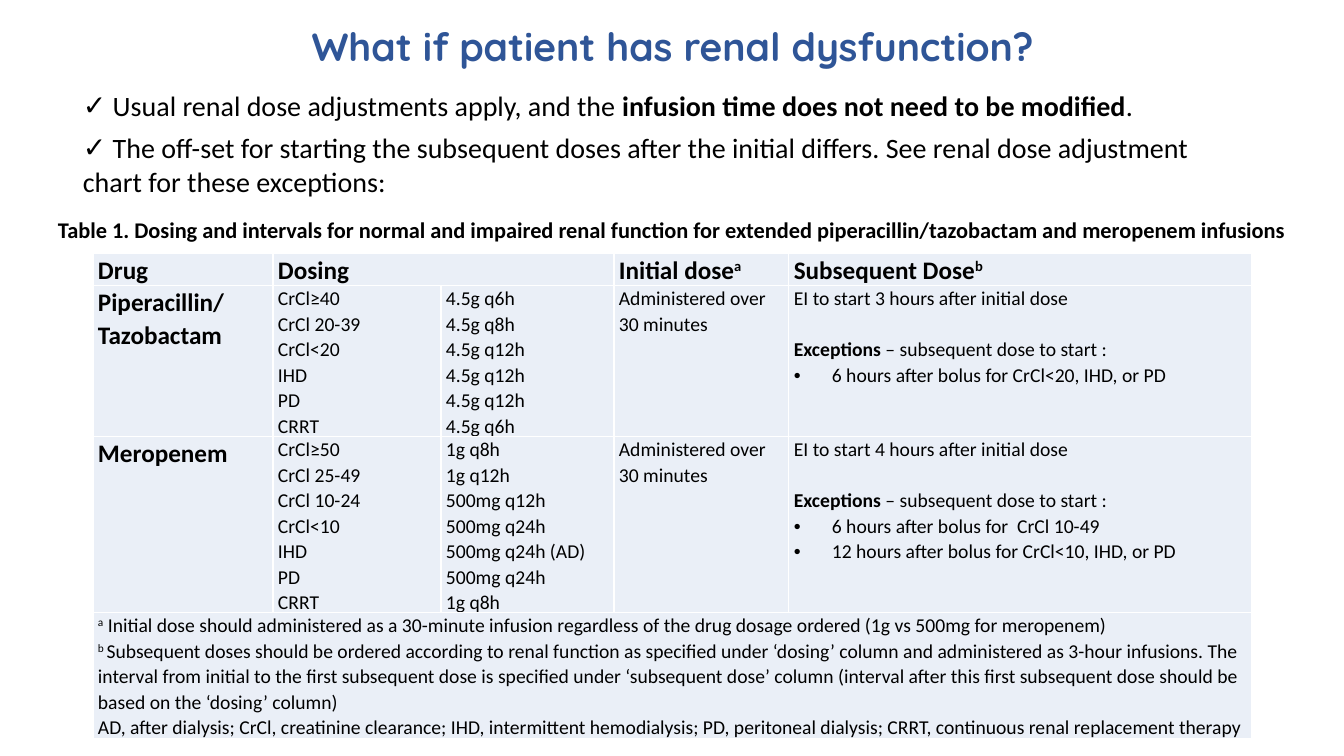
from lxml import etree
from pptx import Presentation
from pptx.dml.color import RGBColor
from pptx.enum.text import MSO_ANCHOR, PP_ALIGN
from pptx.oxml.ns import qn
from pptx.util import Emu, Pt

CENTER, BOTTOM = PP_ALIGN.CENTER, MSO_ANCHOR.BOTTOM
PX = 914400 / 100.8
HEX = {"title": "2F5597", "text": "000000", "cell": "EAEFF7", "rule": "FFFFFF"}

# In all text, *...* is bold and ^...^ is superscript.
TITLE = "*What if patient has renal dysfunction?*"
POINTS = [
    " Usual renal dose adjustments apply, and the *infusion time does not need to be modified*.",
    " The off-set for starting the subsequent doses after the initial differs. "
    "See renal dose adjustment chart for these exceptions:",
]
CAPTION = ("*Table 1. Dosing and intervals for normal and impaired renal function "
           "for extended piperacillin/tazobactam and meropenem infusions*")
HEAD = ["*Drug*", "*Dosing*", "", "*Initial dose^a^*", "*Subsequent Dose^b^*"]
FIRST = "Administered over 30 minutes"
DRUGS = [
    {"name": ["*Piperacillin/*", "*Tazobactam*"],
     "doses": [("CrCl≥40", "4.5g q6h"), ("CrCl 20-39", "4.5g q8h"),
               ("CrCl<20", "4.5g q12h"), ("IHD", "4.5g q12h"),
               ("PD", "4.5g q12h"), ("CRRT", "4.5g q6h")],
     "start": "EI to start 3 hours after initial dose",
     "except": ["6 hours after bolus for CrCl<20, IHD, or PD"]},
    {"name": ["*Meropenem*"],
     "doses": [("CrCl≥50", "1g q8h"), ("CrCl 25-49", "1g q12h"),
               ("CrCl 10-24", "500mg q12h"), ("CrCl<10", "500mg q24h"),
               ("IHD", "500mg q24h (AD)"), ("PD", "500mg q24h"),
               ("CRRT", "1g q8h")],
     "start": "EI to start 4 hours after initial dose",
     "except": ["6 hours after bolus for  CrCl 10-49",
                "12 hours after bolus for CrCl<10, IHD, or PD"]},
]
NOTES = [
    "^a^ Initial dose should administered as a 30-minute infusion regardless of "
    "the drug dosage ordered (1g vs 500mg for meropenem)",
    "^b ^Subsequent doses should be ordered according to renal function as specified under "
    "‘dosing’ column and administered as 3-hour infusions. The interval from initial to the "
    "first subsequent dose is specified under ‘subsequent dose’ column (interval after this "
    "first subsequent dose should be based on the ‘dosing’ column)",
    "AD, after dialysis; CrCl, creatinine clearance; IHD, intermittent hemodialysis; "
    "PD, peritoneal dialysis; CRRT, continuous renal replacement therapy",
]
COLS = [180, 168, 173, 175, 463]
ROWS = [17, 115, 143, 97]
GRID = (93, 253, sum(COLS), 485)


def px(n):
    return Emu(round(n * PX))


def rgb(name):
    return RGBColor.from_string(HEX[name])


def write(para, text, size, font="Calibri", color="text", **form):
    """Fill a paragraph with marked-up text and set its format values."""
    for key, value in form.items():
        setattr(para, key, value)
    bold = False
    for i, part in enumerate(text.split("*")):
        bold = i % 2 == 1
        for j, piece in enumerate(part.split("^")):
            if not piece:
                continue
            run = para.add_run()
            run.text = piece
            look = {"name": font, "size": Pt(size), "bold": bold}
            for key, value in look.items():
                setattr(run.font, key, value)
            run.font.color.rgb = rgb(color)
            if j % 2:
                run.font._element.set("baseline", "30000")


def bullet(para, char, indent=0):
    props = para._p.get_or_add_pPr()
    props.set("marL", str(px(indent)))
    props.set("indent", str(-px(indent)))
    etree.SubElement(props, qn("a:buFont")).set("typeface", "Arial")
    etree.SubElement(props, qn("a:buChar")).set("char", char)


def next_para(frame, i):
    return frame.add_paragraph() if i else frame.paragraphs[0]


def box(slide, *place):
    frame = slide.shapes.add_textbox(*map(px, place)).text_frame
    frame.word_wrap = True
    return frame


def style(cell):
    """Set the margins, fill and borders of a cell."""
    sides = {"margin_left": 5, "margin_right": 5, "margin_top": 0, "margin_bottom": 0}
    for key, value in sides.items():
        setattr(cell, key, px(value))
    cell.fill.solid()
    cell.fill.fore_color.rgb = rgb("cell")
    props = cell._tc.get_or_add_tcPr()
    for i, side in enumerate(("lnL", "lnR", "lnT", "lnB")):
        line = etree.Element(qn("a:" + side), w=str(Pt(1)))
        fill = etree.SubElement(line, qn("a:solidFill"))
        etree.SubElement(fill, qn("a:srgbClr")).set("val", HEX["rule"])
        props.insert(i, line)


def fill_cell(cell, lines, size=14):
    for i, text in enumerate(lines):
        write(next_para(cell.text_frame, i), text, size, line_spacing=1.07)


def fill_drug(cells, drug):
    kinds, doses = zip(*drug["doses"])
    fill_cell(cells[0], drug["name"], 18)
    fill_cell(cells[1], kinds)
    fill_cell(cells[2], doses)
    fill_cell(cells[3], [FIRST])
    fill_cell(cells[4], [drug["start"], "*Exceptions* – subsequent dose to start :",
                         *drug["except"]])
    paras = cells[4].text_frame.paragraphs
    paras[1].space_before = Pt(18.3)
    for para in paras[2:]:
        bullet(para, "•", 38)


def add_grid(slide):
    shape = slide.shapes.add_table(len(ROWS), len(COLS), *map(px, GRID))
    table = shape.table
    table.first_row = table.horz_banding = False
    for col, width in zip(table.columns, COLS):
        col.width = px(width)
    for row, height in zip(table.rows, ROWS):
        row.height = px(height)
    shape.height = px(GRID[3])
    for cell in table.iter_cells():
        style(cell)
    table.cell(0, 1).merge(table.cell(0, 2))
    table.cell(3, 0).merge(table.cell(3, 4))
    for cell, text in zip(table.rows[0].cells, HEAD):
        if text:
            fill_cell(cell, [text], 18)
    for r, drug in enumerate(DRUGS, 1):
        fill_drug(list(table.rows[r].cells), drug)
    fill_cell(table.cell(3, 0), NOTES)


def main():
    deck = Presentation()
    deck.slide_width, deck.slide_height = px(1344), px(756)
    slide = deck.slides.add_slide(deck.slide_layouts[6])

    title = box(slide, 93, 24, 1159, 51)
    title.vertical_anchor = BOTTOM
    write(title.paragraphs[0], TITLE, 28, "Quicksand", "title",
          alignment=CENTER, line_spacing=0.9)

    points = box(slide, 73, 84, 1148, 120)
    for i, text in enumerate(POINTS):
        para = next_para(points, i)
        write(para, text, 20, space_after=Pt(0 if i else 6))
        bullet(para, "✓")

    add_grid(slide)
    write(box(slide, 48, 211, 1264, 37).paragraphs[0], CAPTION, 16)
    deck.save("out.pptx")


if __name__ == "__main__":
    main()
